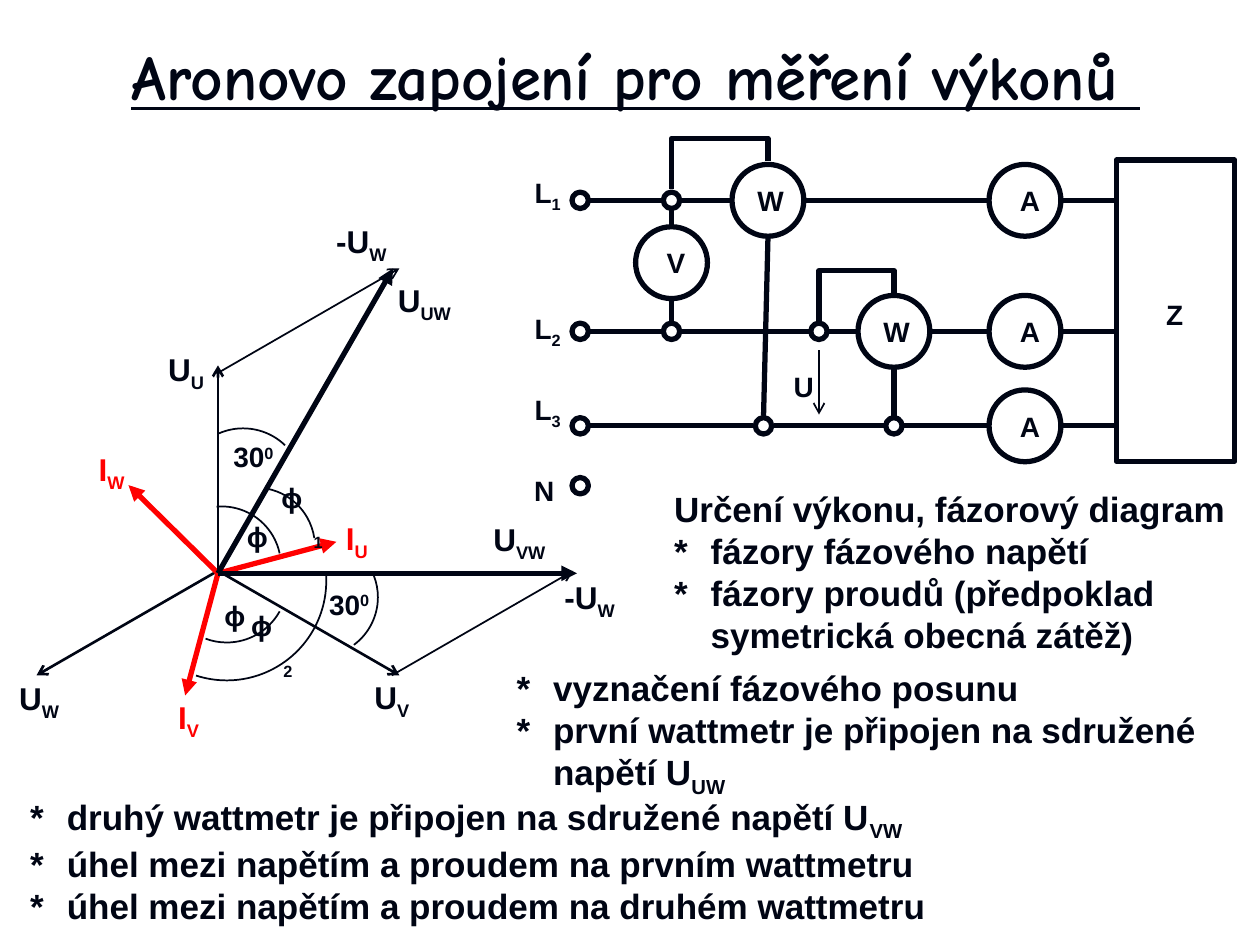
from dataclasses import dataclass
from itertools import pairwise

from lxml import etree
from pptx import Presentation
from pptx import util as u
from pptx.dml.color import RGBColor
from pptx.enum import shapes, text
from pptx.oxml.ns import qn

WIDTH, HEIGHT = u.Inches(10), u.Inches(7.5)
CELL = WIDTH / 100
INK, RED = "000514", "FF0000"
NODE, METER = 1.3, 5.7
NODE_REACH, METER_REACH = 0.8, 3.05
L1, L2, L3, NEUTRAL = 15.9, 26.3, 33.8, 38.55
TERMINAL, VOLT, WATT_1, WATT_2, AMP, LOAD = 46.05, 53.3, 60.95, 70.95, 81.35, 88.6
TAP_2, TAP_3 = 65, 60.6


@dataclass
class Label:
    """Short caption with an optional raised or lowered part."""
    left: float
    top: float
    width: float
    base: str
    script: str = ""
    size: int = 16
    color: str = INK
    shift: int = -25
    middle: bool = False


@dataclass
class Line:
    """Straight line with an optional arrowhead."""
    x1: float
    y1: float
    x2: float
    y2: float
    weight: float = 3
    head: str = ""
    color: str = INK


@dataclass
class Arc:
    """Circular angle mark, clockwise from start to end in degrees."""
    x: float
    y: float
    radius: float
    start: float
    end: float


@dataclass
class Stop:
    """Point on a phase wire and the gap kept around it."""
    x: float
    reach: float


@dataclass
class Notes:
    """Block of paragraphs, each a list of base text and subscript."""
    left: float
    top: float
    width: float
    height: float
    items: list[tuple[str, str]]


def cells(count: float) -> int:
    """Turn grid cells into a length."""
    return u.Emu(round(count * CELL))


def paint(color: str) -> RGBColor:
    """Turn a hex string into a colour."""
    return RGBColor.from_string(color)


def add_box(page, left, top, width, height, inset=0.4):
    """Add an empty text box and return its frame."""
    frame = page.shapes.add_textbox(*map(cells, (left, top, width, height))).text_frame
    frame.margin_left = frame.margin_right = cells(inset)
    frame.margin_top = frame.margin_bottom = cells(min(inset, 0.5))
    frame.word_wrap = True
    return frame


def fill_para(para, base, script, size, color, shift=-25, hang=0.0, face="Arial"):
    """Write text and its shifted part into a paragraph."""
    para.font.size, para.font.bold, para.font.name = u.Pt(size), True, face
    para.font.color.rgb = paint(color)
    props = para._p.get_or_add_pPr()
    props.set("marL", str(cells(hang)))
    props.set("indent", str(-cells(hang)))
    para.add_run().text = base
    if script:
        span = para.add_run()
        span.text = script
        span.font._element.set("baseline", str(shift * 1000))


def draw_label(page, label: Label) -> None:
    """Draw a caption."""
    height = 3.5 if label.size == 16 else 3.8
    frame = add_box(page, label.left, label.top, label.width, height)
    frame.word_wrap = label.middle
    frame.auto_size = text.MSO_AUTO_SIZE.SHAPE_TO_FIT_TEXT
    if label.size == 16:
        frame.vertical_anchor = text.MSO_ANCHOR.MIDDLE
    para = frame.paragraphs[0]
    para.alignment = text.PP_ALIGN.CENTER if label.middle else text.PP_ALIGN.RIGHT
    fill_para(para, label.base, label.script, label.size, label.color, label.shift, 3.8)
    before = etree.Element(qn("a:spcBef"))
    etree.SubElement(before, qn("a:spcPct")).set("val", "20000" if label.middle else "50000")
    para._p.pPr.insert(0, before)


def style_line(item, weight: float, color: str, head: str = "") -> None:
    """Set the stroke of a connector and clear its shadow."""
    item.line.width = u.Pt(weight)
    item.line.color.rgb = paint(color)
    if head:
        etree.SubElement(item.line._get_or_add_ln(), qn("a:tailEnd")).set("type", head)
    etree.SubElement(item._element.spPr, qn("a:effectLst"))


def draw_line(page, line: Line) -> None:
    """Draw a straight line."""
    ends = map(cells, (line.x1, line.y1, line.x2, line.y2))
    item = page.shapes.add_connector(shapes.MSO_CONNECTOR.STRAIGHT, *ends)
    style_line(item, line.weight, line.color, line.head)


def draw_bridge(page, x1, y1, x2, y2, bend) -> None:
    """Draw an elbow that rises from one point and comes down on the next."""
    x, y, rise, run = (x1 + x2) / 2, (y1 + y2) / 2, (y1 - y2) / 2, (x2 - x1) / 2
    ends = map(cells, (x - rise, y - run, x + rise, y + run))
    item = page.shapes.add_connector(shapes.MSO_CONNECTOR.ELBOW, *ends)
    props = item._element.spPr
    props.find(qn("a:xfrm")).set("rot", str(270 * 60000))
    guide = etree.SubElement(props.find(qn("a:prstGeom")).find(qn("a:avLst")), qn("a:gd"))
    guide.set("name", "adj1")
    guide.set("fmla", f"val {round(bend * 100000)}")
    style_line(item, 3, INK)


def draw_outline(page, kind, left, top, width, height, weight=3.0):
    """Draw an unfilled preset shape."""
    item = page.shapes.add_shape(kind, *map(cells, (left, top, width, height)))
    item.shadow.inherit = False
    item.fill.background()
    item.line.width = u.Pt(weight)
    item.line.color.rgb = paint(INK)
    return item


def draw_circle(page, x, y, size) -> None:
    """Draw a circle around a centre."""
    draw_outline(page, shapes.MSO_SHAPE.OVAL, x - size / 2, y - size / 2, size, size)


def draw_meter(page, x, y, letter) -> None:
    """Draw a measuring instrument."""
    draw_circle(page, x, y, METER)
    width = 2.5 if letter == "W" else 1.6
    draw_label(page, Label(x - width / 2, y - 1.75, width, letter, middle=True))


def draw_arc(page, arc: Arc) -> None:
    """Draw an angle mark."""
    size = 2 * arc.radius
    item = draw_outline(page, shapes.MSO_SHAPE.ARC, arc.x - arc.radius, arc.y - arc.radius, size, size, 1)
    item.adjustments[0], item.adjustments[1] = arc.start * 0.6, arc.end * 0.6


def draw_notes(page, notes: Notes) -> None:
    """Draw a block of starred notes."""
    frame = add_box(page, notes.left, notes.top, notes.width, notes.height)
    for index, (base, script) in enumerate(notes.items):
        para = frame.add_paragraph() if index else frame.paragraphs[0]
        fill_para(para, base, script, 20, INK, hang=2.9)


def draw_circuit(page) -> None:
    """Draw the two-wattmeter circuit."""
    wires = {L1: [(VOLT, NODE_REACH), (WATT_1, METER_REACH)],
             L2: [(VOLT, NODE_REACH), (TAP_2, NODE_REACH), (WATT_2, METER_REACH)],
             L3: [(TAP_3, NODE_REACH), (WATT_2, NODE_REACH)]}
    for number, (y, middle) in enumerate(wires.items(), 1):
        stops = [Stop(TERMINAL, NODE_REACH), *(Stop(*item) for item in middle),
                 Stop(AMP, METER_REACH), Stop(LOAD, 0)]
        for here, after in pairwise(stops):
            draw_line(page, Line(here.x + here.reach, y, after.x - after.reach, y))
        for stop in stops:
            if stop.reach == NODE_REACH:
                draw_circle(page, stop.x, y, NODE)
        draw_meter(page, AMP, y, "A")
        draw_label(page, Label(41.9, {1: 13.7, 2: 24.5, 3: 30.9}[number], 3, "L", str(number)))
    draw_circle(page, TERMINAL, NEUTRAL, NODE)
    for meter in [(VOLT, 20.85, "V"), (WATT_1, L1, "W"), (WATT_2, L2, "W")]:
        draw_meter(page, *meter)
    for line in [Line(VOLT, 16.6, VOLT, 17.9), Line(VOLT, 23.9, VOLT, 25.5), Line(WATT_1, 18.9, TAP_3, 33),
                 Line(WATT_2, 29.3, WATT_2, 33), Line(TAP_2, 27.8, TAP_2, 32.9, 1, "arrow")]:
        draw_line(page, line)
    draw_bridge(page, VOLT, 15, WATT_1, 12.8, 1.83)
    draw_bridge(page, TAP_2, 25.5, WATT_2, 23.3, 1.83)
    draw_outline(page, shapes.MSO_SHAPE.RECTANGLE, LOAD, 12.7, 9.4, 23.9)
    for label in [Label(42, 37.2, 2.4, "N"), Label(62.6, 28.9, 2.4, "U"), Label(92.1, 23.2, 2.2, "Z")]:
        draw_label(page, label)


def draw_phasors(page) -> None:
    """Draw the phasor diagram."""
    x, y = 17.3, 45.5
    for end in [(17.3, 29), (31.7, 53.6), (2.9, 53.6)]:
        draw_line(page, Line(x, 45.3, *end, 1.5, "arrow"))
    for end in [(26.7, 43), (14.7, 55.2), (10.2, 38.5)]:
        draw_line(page, Line(x, y, *end, 3, "triangle", RED))
    for end in [(31.2, 21.3), (45.8, 45.5)]:
        draw_line(page, Line(x, y, *end, 3, "triangle"))
    for start in [(17.3, 29.6), (31.1, 53.6)]:
        draw_line(page, Line(*start, start[0] + 14.4, start[1] - 8.3, 1, "arrow"))
    for arc in [Arc(17.6, 44.9, 4.7, 265, 348), Arc(18, 46.2, 4.8, 29, 110.5), Arc(19.3, 38.8, 4.8, 246.5, 314),
                Arc(20.3, 43.4, 4.7, 282, 351.5), Arc(25.3, 47.4, 4.7, 339, 53.5), Arc(18, 46.1, 7.9, 355.5, 108)]:
        draw_arc(page, arc)
    for item in [(0.9, 53.5, 4.2, "U", "W"), (29.2, 53.4, 3.7, "U", "V"), (12.8, 27.4, 3.8, "U", "U"),
                 (26.1, 17.2, 5, "-U", "W"), (44.2, 45.5, 5, "-U", "W"), (30.8, 21.9, 5.4, "U", "UW"),
                 (38.4, 40.9, 5.3, "U", "VW")]:
        draw_label(page, Label(*item, 18))
    for item in [(7.2, 35.3, 3.1, "I", "W"), (13.6, 55, 2.6, "I", "V"), (26.9, 40.8, 2.7, "I", "U")]:
        draw_label(page, Label(*item, 18, RED))
    for item in [(19.2, 40.8, 2.1, "ϕ"), (17.4, 47.1, 2.1, "ϕ"), (21.4, 39.2, 3, "ϕ", "1"), (19, 49.4, 3, "ϕ", "2")]:
        draw_label(page, Label(*item))
    for left, top in [(18, 34.5), (25.6, 46.2)]:
        draw_label(page, Label(left, top, 4.1, "30", "0", shift=30))


def main() -> None:
    """Build the slide and save it."""
    deck = Presentation()
    deck.slide_width, deck.slide_height = WIDTH, HEIGHT
    page = deck.slides.add_slide(deck.slide_layouts[6])
    frame = add_box(page, 2, 2, 96.9, 7.9, 1)
    frame.vertical_anchor = text.MSO_ANCHOR.MIDDLE
    para = frame.paragraphs[0]
    para.alignment, para.font.underline = text.PP_ALIGN.CENTER, True
    fill_para(para, "Aronovo zapojení pro měření výkonů ", "", 36, INK, face="Comic Neue")
    draw_circuit(page)
    draw_phasors(page)
    for notes in [
        Notes(53.1, 38.3, 44.9, 14.1, [("Určení výkonu, fázorový diagram", ""), ("*\tfázory fázového napětí", ""),
                                       ("*\tfázory proudů (předpoklad symetrická obecná zátěž)", "")]),
        Notes(40.6, 52.5, 56.7, 10.8, [("*\tvyznačení fázového posunu", ""),
                                       ("*\tprvní wattmetr je připojen na sdružené napětí U", "UW")]),
        Notes(2, 62.7, 74, 10.8, [("*\tdruhý wattmetr je připojen na sdružené napětí U", "VW"),
                                  ("*\túhel mezi napětím a proudem na prvním wattmetru", ""),
                                  ("*\túhel mezi napětím a proudem na druhém wattmetru", "")])]:
        draw_notes(page, notes)
    deck.save("out.pptx")


if __name__ == "__main__":
    main()
